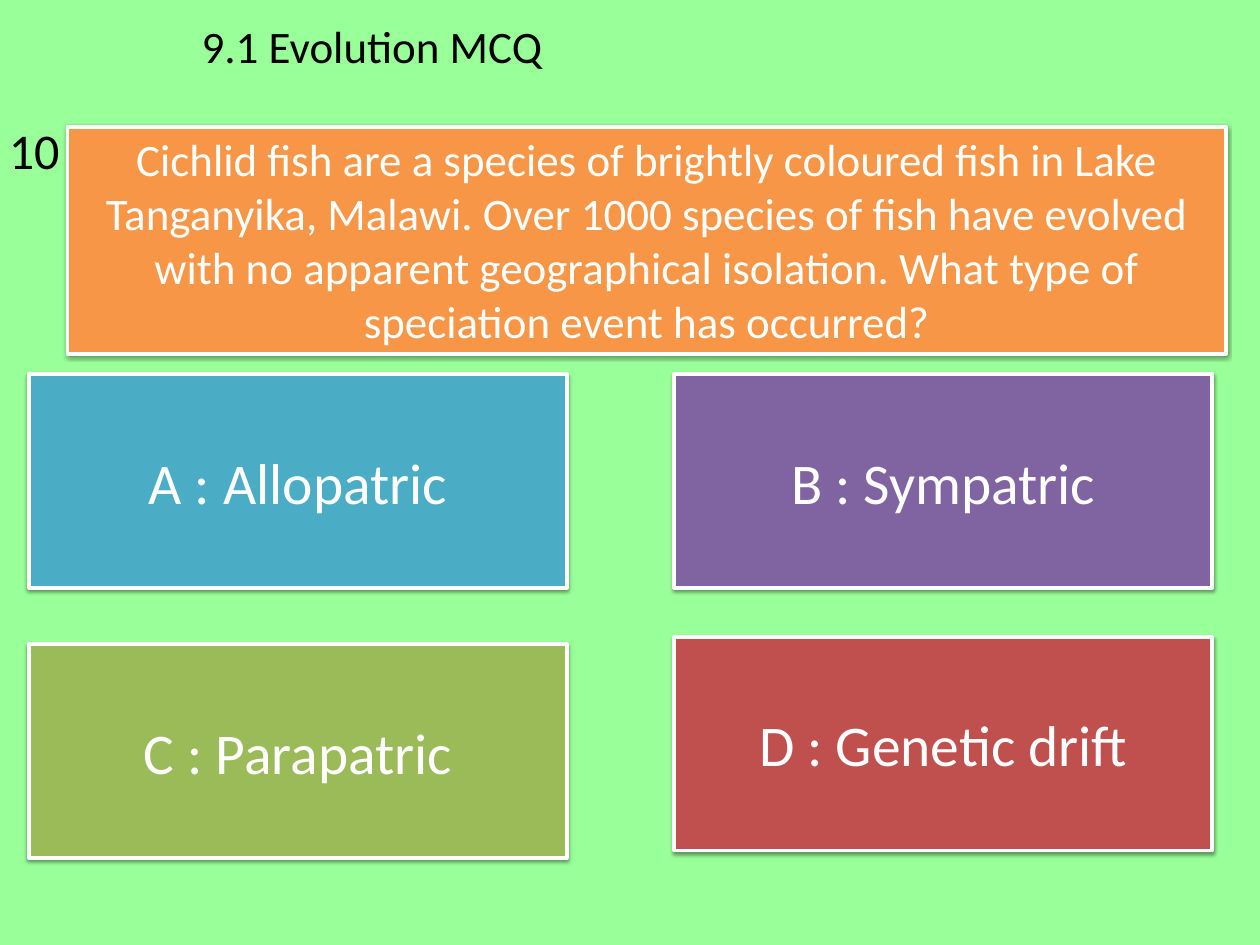
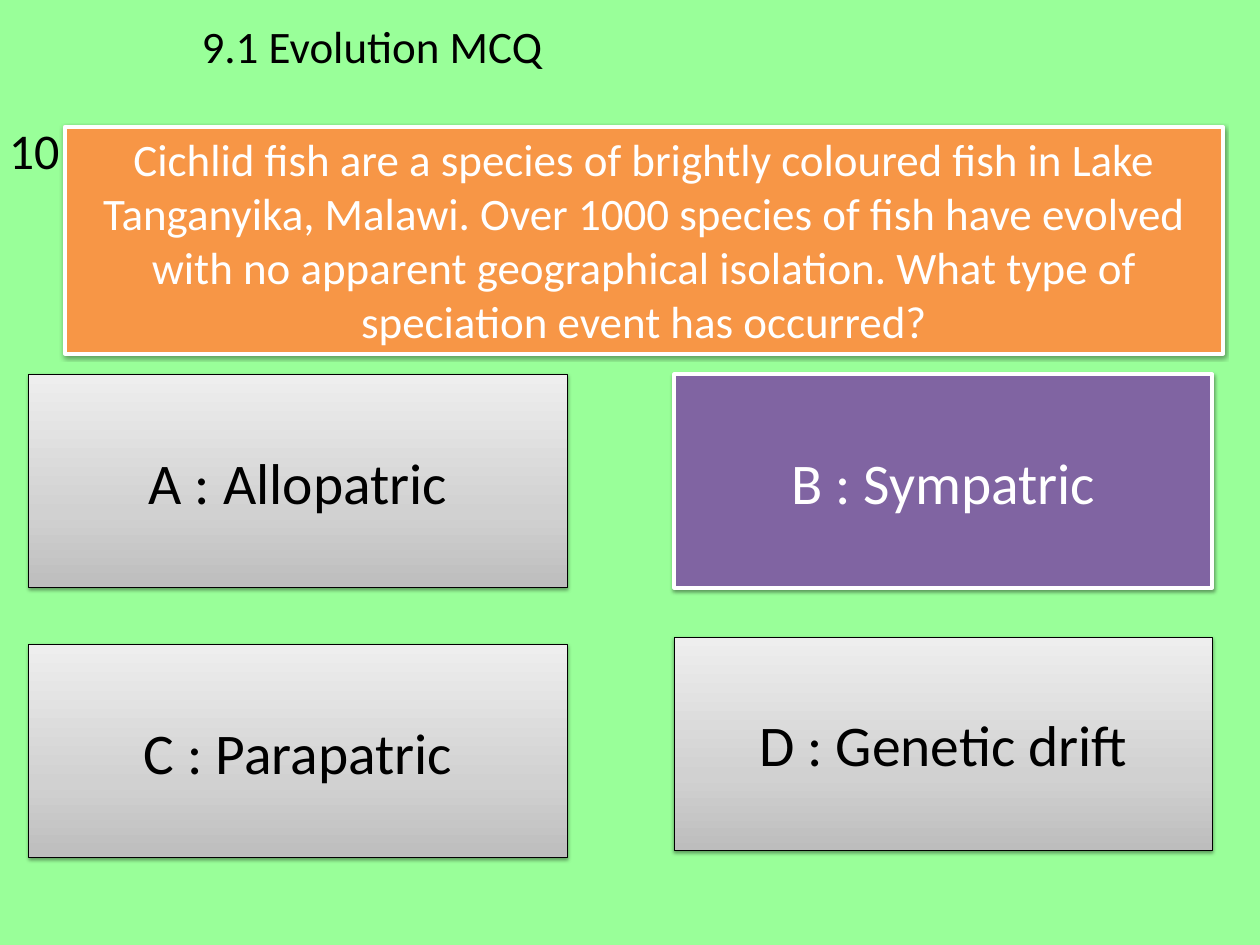
from lxml import etree
from pptx import Presentation
from pptx import util as u
from pptx.dml import color
from pptx.enum import shapes, text
from pptx.oxml import ns

FONT = "Calibri"
BACKGROUND, BLACK, WHITE, ORANGE = "99FF99", "000000", "FFFFFF", "F79646"
GREY_STOPS = [(0, "BDBDBD"), (35, "D1D1D1"), (100, "EEEEEE")]
TITLE = "9.1 Evolution MCQ"
NUMBER = "10"
QUESTION = (
    "Cichlid fish are a species of brightly coloured fish in Lake Tanganyika, Malawi. "
    "Over 1000 species of fish have evolved with no apparent geographical isolation. "
    "What type of speciation event has occurred?"
)
ANSWERS = {
    "A": ("Allopatric", "4BACC6", 0.32, 4.16),
    "B": ("Sympatric", "8064A2", 7.49, 4.16),
    "C": ("Parapatric", "9BBB59", 0.32, 7.16),
    "D": ("Genetic drift", "C0504D", 7.49, 7.08),
}
ANSWER_SIZE = (5.98, 2.37)
CORRECT = "B"


def rgb(value):
    return color.RGBColor.from_string(value)


def add_element(parent, tag, **values):
    element = etree.SubElement(parent, ns.qn(tag))
    for name, value in values.items():
        element.set(name, str(value))
    return element


def write(box, words, size, ink, align, **frame_format):
    frame = box.text_frame
    values = {"word_wrap": True, "vertical_anchor": text.MSO_ANCHOR.TOP, **frame_format}
    for name, value in values.items():
        setattr(frame, name, value)
    para = frame.paragraphs[0]
    para.alignment = align
    span = para.add_run()
    span.text = words
    for name, value in {"name": FONT, "size": u.Pt(size)}.items():
        setattr(span.font, name, value)
    span.font.color.rgb = rgb(ink)


def add_shadow(box):
    box.shadow.inherit = False
    effects = box._element.spPr.find(ns.qn("a:effectLst"))
    shadow = add_element(effects, "a:outerShdw", blurRad=40000, dist=20000,
                         dir=5400000, rotWithShape=0)
    tint = add_element(shadow, "a:srgbClr", val=BLACK)
    add_element(tint, "a:alpha", val=38000)


def fill_gradient(box):
    box.fill.gradient()
    gradient = box._element.spPr.find(ns.qn("a:gradFill"))
    for child in list(gradient):
        gradient.remove(child)
    stops = add_element(gradient, "a:gsLst")
    for place, value in GREY_STOPS:
        stop = add_element(stops, "a:gs", pos=place * 1000)
        add_element(stop, "a:srgbClr", val=value)
    add_element(gradient, "a:lin", ang=270 * 60000, scaled=0)


def add_panel(page, area, fill):
    box = page.shapes.add_shape(shapes.MSO_SHAPE.RECTANGLE, *map(u.Inches, area))
    if fill:
        box.fill.solid()
        box.fill.fore_color.rgb = rgb(fill)
    else:
        fill_gradient(box)
    box.line.color.rgb = rgb(WHITE if fill else BLACK)
    box.line.width = u.Pt(3 if fill else 0.75)
    add_shadow(box)
    return box


def add_heading(page, area):
    title = page.shapes.title
    for name, value in zip(("left", "top", "width", "height"), area):
        setattr(title, name, u.Inches(value))
    write(title, TITLE, 36, BLACK, text.PP_ALIGN.LEFT,
          auto_size=text.MSO_AUTO_SIZE.SHAPE_TO_FIT_TEXT)


def add_question(page, area):
    left, top, width, height = area
    panel = add_panel(page, area, ORANGE)
    write(panel, QUESTION, 36, WHITE, text.PP_ALIGN.CENTER,
          auto_size=text.MSO_AUTO_SIZE.SHAPE_TO_FIT_TEXT)
    number = page.shapes.add_textbox(0, u.Inches(top - 0.13), u.Inches(0.86), u.Inches(0.77))
    write(number, NUMBER, 40, BLACK, text.PP_ALIGN.LEFT,
          auto_size=text.MSO_AUTO_SIZE.SHAPE_TO_FIT_TEXT)


def add_answer(page, letter, revealed):
    words, fill, left, top = ANSWERS[letter]
    dimmed = revealed and letter != CORRECT
    panel = add_panel(page, (left, top, *ANSWER_SIZE), None if dimmed else fill)
    write(panel, f"{letter} : {words}", 46, BLACK if dimmed else WHITE,
          text.PP_ALIGN.CENTER, vertical_anchor=text.MSO_ANCHOR.MIDDLE)


def add_quiz_page(deck, question_left, revealed):
    page = deck.slides.add_slide(deck.slide_layouts.get_by_name("Title Only"))
    add_heading(page, (2.14, 0.15, 6.92, 0.71))
    add_question(page, (question_left, 1.41, 12.87, 2.52))
    for letter in ANSWERS:
        add_answer(page, letter, revealed)


def main():
    deck = Presentation()
    deck.slide_width, deck.slide_height = u.Inches(14), u.Inches(10.5)
    backdrop = deck.slide_master.background.fill
    backdrop.solid()
    backdrop.fore_color.rgb = rgb(BACKGROUND)
    add_quiz_page(deck, 0.75, revealed=False)
    add_quiz_page(deck, 0.72, revealed=True)
    deck.save("out.pptx")


if __name__ == "__main__":
    main()
